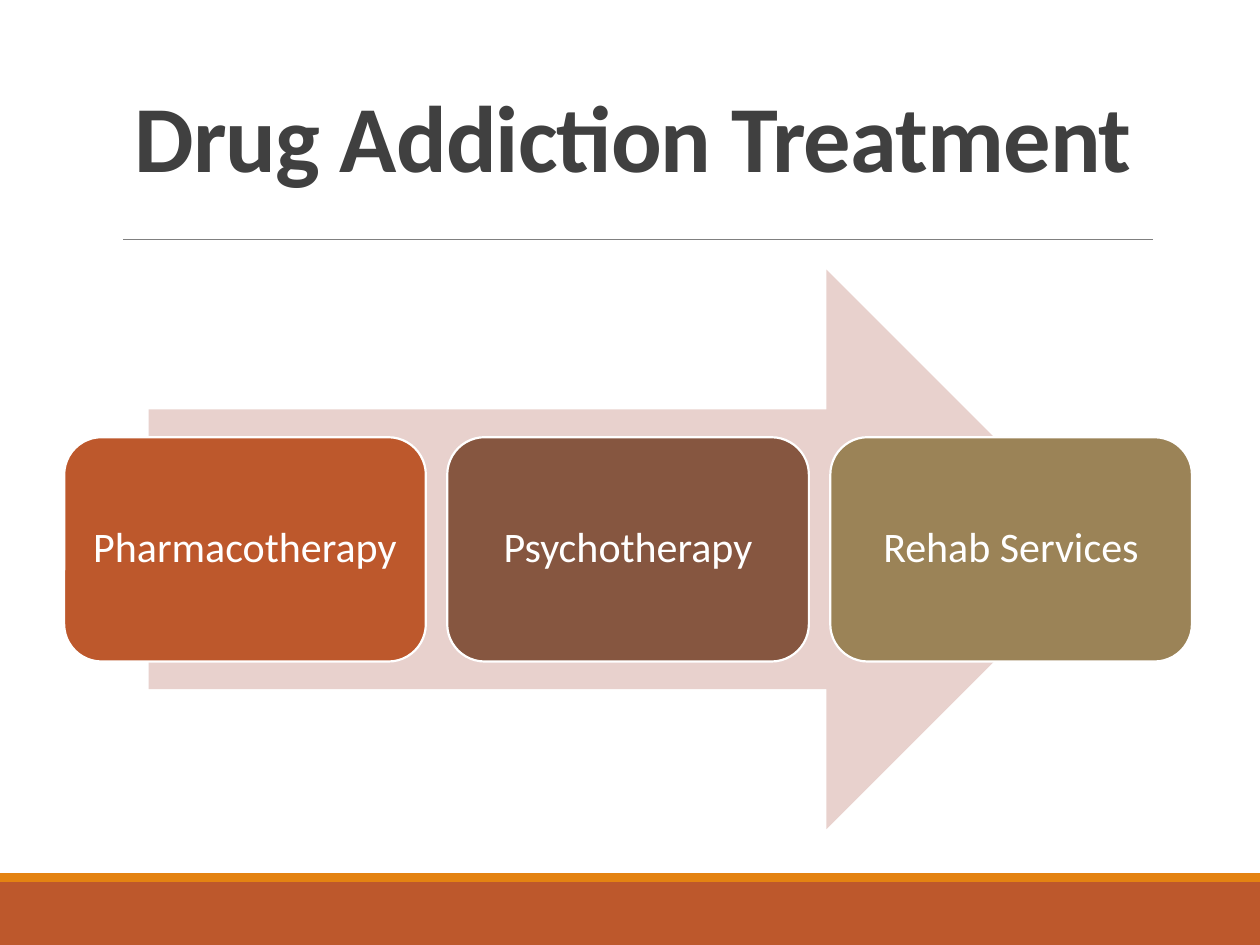
import pptx
import pptx.util
import pptx.dml.color
import pptx.enum.shapes
import pptx.enum.text
import pptx.oxml.ns
import lxml.etree

Inches = pptx.util.Inches
Pt = pptx.util.Pt
SHAPES = pptx.enum.shapes.MSO_SHAPE
ANCHOR = pptx.enum.text.MSO_ANCHOR

WIDTH, HEIGHT = 10, 7.5
FONT = "Calibri"
COLORS = {
    "title": "404040",
    "rule": "808080",
    "band": "BD582C",
    "stripe": "E48312",
    "arrow": "E8D1CD",
    "white": "FFFFFF",
}
STEPS = [
    ("Pharmacotherapy", "BD582C"),
    ("Psychotherapy", "865640"),
    ("Rehab Services", "9B8357"),
]
STEP_LEFT, STEP_TOP = 0.51, 3.47
STEP_WIDTH, STEP_HEIGHT = 2.87, 1.78
STEP_PITCH = 3.04


def rgb(value):
    return pptx.dml.color.RGBColor.from_string(value)


def add_filled_shape(shapes, kind, left, top, width, height, color):
    shape = shapes.add_shape(
        kind, Inches(left), Inches(top), Inches(width), Inches(height))
    shape.shadow.inherit = False
    shape.fill.solid()
    shape.fill.fore_color.rgb = rgb(color)
    shape.line.fill.background()
    return shape


def write_centred(frame, text, size, color, line_spacing):
    frame.text = text
    frame.word_wrap = True
    paragraph = frame.paragraphs[0]
    paragraph.alignment = pptx.enum.text.PP_ALIGN.CENTER
    paragraph.line_spacing = line_spacing
    paragraph.font.name = FONT
    paragraph.font.size = Pt(size)
    paragraph.font.color.rgb = rgb(color)
    return paragraph


def add_title(slide, text):
    title = slide.shapes.title
    title.left, title.top = Inches(0.9), Inches(0.59)
    title.width, title.height = Inches(8.25), Inches(0.98)
    frame = title.text_frame
    paragraph = write_centred(frame, text, 54, COLORS["title"], 0.85)
    paragraph.font.bold = True
    paragraph.runs[0].font._element.set("spc", "-50")
    frame.auto_size = pptx.enum.text.MSO_AUTO_SIZE.NONE
    frame.vertical_anchor = ANCHOR.BOTTOM


def add_rule(slide, left, right, y):
    rule = slide.shapes.add_connector(
        pptx.enum.shapes.MSO_CONNECTOR.STRAIGHT,
        Inches(left), Inches(y), Inches(right), Inches(y))
    rule.line.color.rgb = rgb(COLORS["rule"])
    rule.line.width = Pt(0.5)
    lxml.etree.SubElement(
        rule._element.spPr, pptx.oxml.ns.qn("a:effectLst"))


def add_footer(slide):
    for top, height, name in ((7, 0.5, "band"), (6.93, 0.07, "stripe")):
        add_filled_shape(slide.shapes, SHAPES.RECTANGLE,
                         0, top, WIDTH, height, COLORS[name])


def add_step(shapes, column, text, color):
    step = add_filled_shape(
        shapes, SHAPES.ROUNDED_RECTANGLE, STEP_LEFT + column * STEP_PITCH,
        STEP_TOP, STEP_WIDTH, STEP_HEIGHT, color)
    step.line.color.rgb = rgb(COLORS["white"])
    step.line.width = Pt(1.25)
    frame = step.text_frame
    frame.margin_left = frame.margin_right = Inches(0.1)
    frame.margin_top = frame.margin_bottom = Inches(0.1)
    frame.vertical_anchor = ANCHOR.MIDDLE
    write_centred(frame, text, 24, COLORS["white"], 0.9)


def add_process(slide):
    """Group the background arrow with the steps that lie on it."""
    shapes = slide.shapes.add_group_shape().shapes
    add_filled_shape(shapes, SHAPES.RIGHT_ARROW,
                     1.18, 2.14, 7.6, 4.44, COLORS["arrow"])
    for column, (text, color) in enumerate(STEPS):
        add_step(shapes, column, text, color)


def main():
    presentation = pptx.Presentation()
    presentation.slide_width = Inches(WIDTH)
    presentation.slide_height = Inches(HEIGHT)
    slide = presentation.slides.add_slide(presentation.slide_layouts[5])
    add_footer(slide)
    add_rule(slide, 0.98, 9.15, 1.9)
    add_title(slide, "Drug Addiction Treatment")
    add_process(slide)
    presentation.save("out.pptx")


if __name__ == "__main__":
    main()
